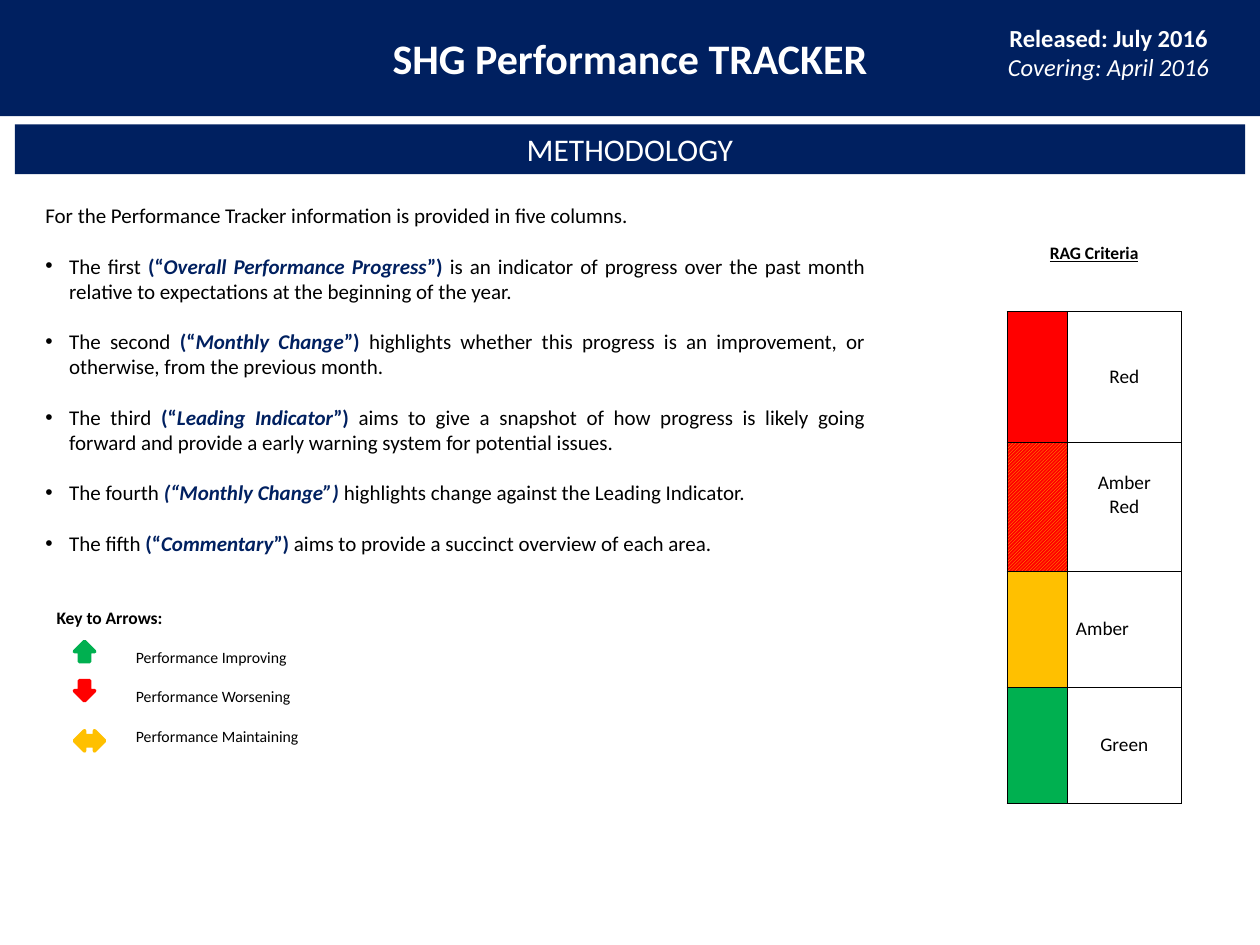
from lxml import etree
from pptx import Presentation
from pptx.dml.color import RGBColor
from pptx.enum import dml, shapes, text
from pptx.oxml import ns
from pptx.util import Cm, Pt

COLORS = {
    "navy": "002060", "white": "FFFFFF", "black": "000000",
    "red": "FF0000", "amber": "FFC000", "green": "00B050",
}
FONT = "Calibri"
CENTER, LEFT, JUSTIFY = text.PP_ALIGN.CENTER, text.PP_ALIGN.LEFT, text.PP_ALIGN.JUSTIFY

TITLE = "SHG Performance TRACKER"
SECTION = "METHODOLOGY"
RELEASED, COVERING = "Released: July 2016", "Covering: April 2016"
INTRO = "For the Performance Tracker information is provided in five columns."
COLUMNS = [
    ("The first ", "Overall Performance Progress", False,
     "is an indicator of progress over the past month relative to expectations at the beginning of the year."),
    ("The second ", "Monthly Change", False,
     "highlights whether this progress is an improvement, or otherwise, from the previous month."),
    ("The third ", "Leading Indicator", False,
     "aims to give a snapshot of how progress is likely going forward and provide a early warning system "
     "for potential issues."),
    ("The fourth ", "Monthly Change", True, "highlights change against the Leading Indicator."),
    ("The fifth ", "Commentary", False, "aims to provide a succinct overview of each area."),
]
KEY_HEADING = "Key to Arrows:"
ARROWS = [
    ("Performance Improving", shapes.MSO_SHAPE.UP_ARROW, "green", 12.93, 12.93, 0.41),
    ("Performance Worsening", shapes.MSO_SHAPE.DOWN_ARROW, "red", 13.72, 13.72, 0.41),
    ("Performance Maintaining", shapes.MSO_SHAPE.LEFT_RIGHT_ARROW, "amber", 14.53, 14.73, 0.61),
]
RAG_HEADING = "RAG Criteria"
RAG = [
    (["Red"], ["red"], CENTER, 2.64),
    (["Amber", "Red"], ["amber", "red"], CENTER, 2.59),
    (["Amber"], ["amber"], LEFT, 2.34),
    (["Green"], ["green"], CENTER, 2.34),
]
RAG_HEADING_HEIGHT = 2.34


def rgb(name):
    return RGBColor.from_string(COLORS[name])


def box(left, top, width, height):
    return Cm(left), Cm(top), Cm(width), Cm(height)


def place(shape, *lengths):
    shape.left, shape.top, shape.width, shape.height = box(*lengths)


def add_run(paragraph, words, size, color="black", bold=False, italic=False):
    run = paragraph.add_run()
    run.text = words
    font = run.font
    font.name, font.size, font.bold, font.italic = FONT, Pt(size), bold, italic
    font.color.rgb = rgb(color)
    return run


def paint(shape, color):
    shape.fill.solid()
    shape.fill.fore_color.rgb = rgb(color)


def fill_bar(bar, words, size, bold):
    paint(bar, "navy")
    bar.line.fill.background()
    frame = bar.text_frame
    frame.vertical_anchor = text.MSO_ANCHOR.MIDDLE
    frame.paragraphs[0].alignment = CENTER
    add_run(frame.paragraphs[0], words, size, "white", bold)


def add_label(slide, lengths):
    frame = slide.shapes.add_textbox(*box(*lengths)).text_frame
    frame.word_wrap = True
    return frame


def set_bullet(paragraph, indent, char=None):
    props = paragraph._p.get_or_add_pPr()
    props.set("marL", str(Cm(indent)))
    props.set("indent", str(-Cm(indent)))
    if char:
        etree.SubElement(props, ns.qn("a:buFont"), typeface="Arial")
        etree.SubElement(props, ns.qn("a:buChar"), char=char)
    else:
        etree.SubElement(props, ns.qn("a:buNone"))


def set_borders(cell, sides):
    props = cell._tc.get_or_add_tcPr()
    for position, side in enumerate(sides):
        edge = etree.Element(ns.qn("a:ln" + side), w=str(Pt(0.5)))
        solid = etree.SubElement(edge, ns.qn("a:solidFill"))
        etree.SubElement(solid, ns.qn("a:srgbClr"), val=COLORS["black"])
        props.insert(position, edge)


def fill_cell(cell, lines, align, size, bold=False, bottom=0):
    cell.fill.background()
    cell.vertical_anchor = text.MSO_ANCHOR.MIDDLE
    cell.margin_left = Cm(0.17) if align == LEFT else 0
    cell.margin_right = cell.margin_top = 0
    cell.margin_bottom = Cm(bottom)
    frame = cell.text_frame
    for index, line in enumerate(lines):
        paragraph = frame.add_paragraph() if index else frame.paragraphs[0]
        paragraph.alignment = align
        add_run(paragraph, line, size, bold=bold).font.underline = bold


def build_header(slide):
    title = slide.shapes.title
    place(title, 0, 0, 25.4, 2.34)
    fill_bar(title, TITLE, 24, True)
    section = slide.shapes.add_shape(shapes.MSO_SHAPE.RECTANGLE, *box(0.3, 2.51, 24.8, 1))
    section.shadow.inherit = False
    fill_bar(section, SECTION, 18, False)
    dates = add_label(slide, (19.3, 0.33, 6.1, 1.45))
    released, covering = dates.paragraphs[0], dates.add_paragraph()
    released.alignment = covering.alignment = CENTER
    add_run(released, RELEASED, 14, "white", bold=True)
    add_run(covering, COVERING, 14, "white", italic=True)


def build_methodology(slide):
    body = slide.placeholders[1]
    place(body, 0.66, 3.96, 17.04, 7.95)
    frame = body.text_frame
    frame.auto_size = text.MSO_AUTO_SIZE.NONE
    intro = frame.paragraphs[0]
    intro.alignment, intro.space_before = JUSTIFY, Pt(0)
    set_bullet(intro, 0)
    add_run(intro, INTRO, 12)
    for lead, name, italic_quotes, rest in COLUMNS:
        item = frame.add_paragraph()
        item.alignment, item.space_before = JUSTIFY, Pt(14.4)
        set_bullet(item, 0.48, "•")
        add_run(item, lead, 12)
        add_run(item, "(“", 12, "navy", True, italic_quotes)
        add_run(item, name, 12, "navy", True, True)
        add_run(item, "”) ", 12, "navy", True, italic_quotes)
        add_run(item, rest, 12)


def build_key(slide):
    heading = add_label(slide, (0.89, 12.12, 8.41, 0.64))
    add_run(heading.paragraphs[0], KEY_HEADING, 10, bold=True)
    for meaning, kind, color, label_top, arrow_top, width in ARROWS:
        arrow = slide.shapes.add_shape(kind, *box(1.5, arrow_top, width, 0.41))
        arrow.shadow.inherit = False
        paint(arrow, color)
        arrow.line.color.rgb = rgb(color)
        arrow.line.width = Pt(2)
        etree.SubElement(arrow.line._get_or_add_ln(), ns.qn("a:round"))
        label = add_label(slide, (2.49, label_top, 5.41, 0.64))
        add_run(label.paragraphs[0], meaning, 9)


def build_rag(slide):
    heights = [RAG_HEADING_HEIGHT] + [row[-1] for row in RAG]
    rag = slide.shapes.add_table(len(heights), 2, *box(20.3, 3.94, 3.51, sum(heights))).table
    rag.first_row = rag.horz_banding = False
    for column, width in zip(rag.columns, (1.22, 2.29)):
        column.width = Cm(width)
    for row, height in zip(rag.rows, heights):
        row.height = Cm(height)
    heading = rag.cell(0, 0)
    heading.merge(rag.cell(0, 1))
    fill_cell(heading, [RAG_HEADING], CENTER, 10, bold=True)
    for cell in rag.rows[0].cells:
        set_borders(cell, "B")
    for index, (lines, colors, align, _) in enumerate(RAG, start=1):
        swatch, label = rag.rows[index].cells
        if len(colors) == 2:
            swatch.fill.patterned()
            swatch.fill.pattern = dml.MSO_PATTERN.DARK_UPWARD_DIAGONAL
            swatch.fill.fore_color.rgb, swatch.fill.back_color.rgb = map(rgb, colors)
        else:
            paint(swatch, colors[0])
        fill_cell(label, lines, align, 11, bottom=0.48 if len(lines) == 2 else 0)
        for cell in (swatch, label):
            set_borders(cell, "LRTB")


def main():
    deck = Presentation()
    deck.slide_width, deck.slide_height = Cm(25.4), Cm(19.05)
    slide = deck.slides.add_slide(deck.slide_layouts[1])
    for build in (build_header, build_methodology, build_key, build_rag):
        build(slide)
    deck.save("out.pptx")


if __name__ == "__main__":
    main()
